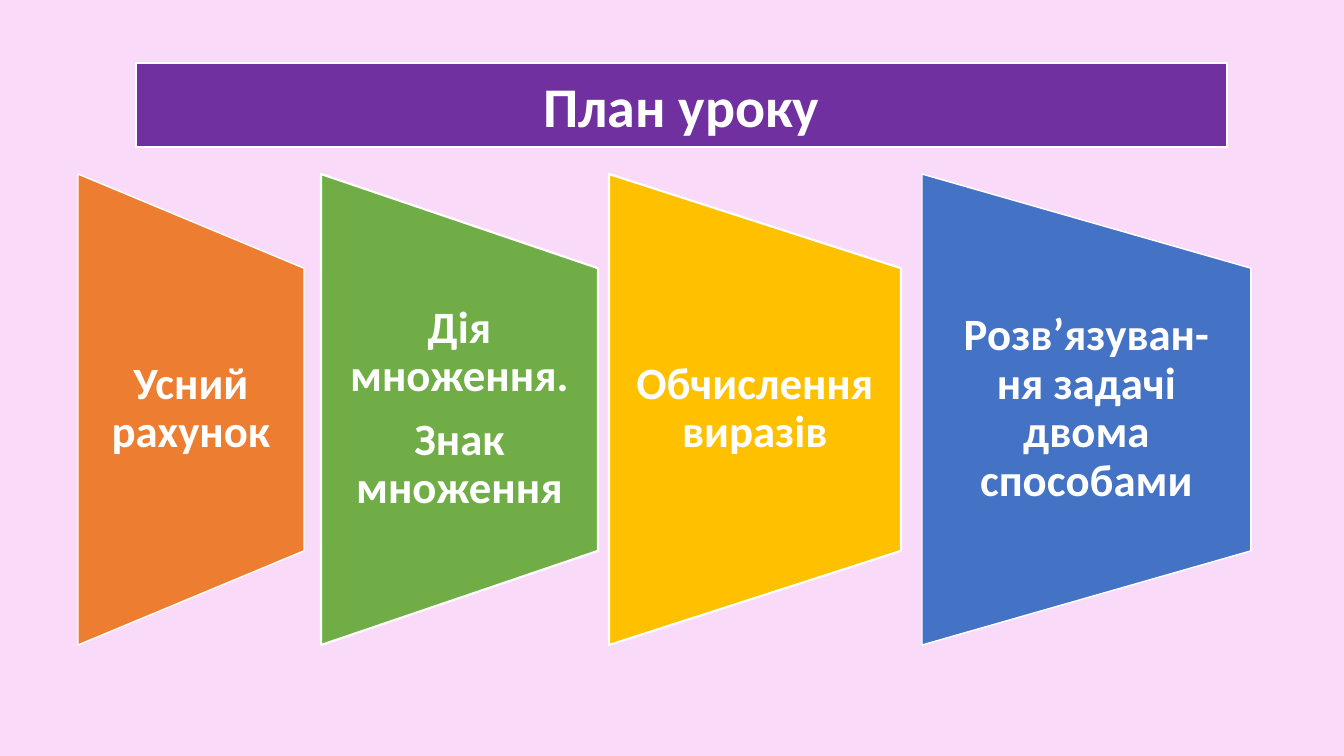
"""Build the lesson plan slide with a title bar and four stage panels."""
from typing import NamedTuple

from pptx import Presentation
from pptx import util as u
from pptx.dml.color import RGBColor
from pptx.enum import shapes, text

PX = 12192000 / 1344
PANEL_TOP, PANEL_HEIGHT = 174, 471
LABEL_TOP, LABEL_HEIGHT, LABEL_INSET = 268, 282, 22
WHITE = "FFFFFF"


class Stage(NamedTuple):
    left: int
    width: int
    fill: str
    outline: float
    lines: tuple[str, ...]


STAGES = (
    Stage(78, 226, "ED7D31", 1, ("Усний рахунок",)),
    Stage(321, 277, "70AD47", 1.5, ("Дія множення.", "Знак множення")),
    Stage(609, 292, "FFC000", 1.5, ("Обчислення виразів",)),
    Stage(922, 329, "4472C4", 1, ("Розв’язуван-ня задачі двома способами",)),
)


def px(length: float) -> int:
    return round(length * PX)


def colour(value: str) -> RGBColor:
    return RGBColor.from_string(value)


def paint(shape, fill: str, outline: float) -> None:
    shape.fill.solid()
    shape.fill.fore_color.rgb = colour(fill)
    shape.line.color.rgb = colour(WHITE)
    shape.line.width = u.Pt(outline)


def write(frame, lines: tuple[str, ...], *, size: int, spacing: float = 1, gap: float = 0) -> None:
    frame.word_wrap = True
    frame.vertical_anchor = text.MSO_ANCHOR.MIDDLE
    for index, line in enumerate(lines):
        para = frame.add_paragraph() if index else frame.paragraphs[0]
        para.alignment = text.PP_ALIGN.CENTER
        para.line_spacing = spacing
        para.space_before = u.Pt(gap if index else 0)
        span = para.add_run()
        span.text = line
        span.font.name = "Calibri"
        span.font.size = u.Pt(size)
        span.font.bold = True
        span.font.color.rgb = colour(WHITE)


def add_title(page) -> None:
    title = page.shapes.title
    title.left, title.top, title.width, title.height = map(px, (136, 66, 1091, 78))
    paint(title, "7030A0", 1.5)
    write(title.text_frame, ("План уроку",), size=40)
    title.text_frame.auto_size = text.MSO_AUTO_SIZE.SHAPE_TO_FIT_TEXT


def add_stage(page, stage: Stage) -> None:
    shift = (stage.width - PANEL_HEIGHT) / 2
    panel = page.shapes.add_shape(
        shapes.MSO_SHAPE.FLOWCHART_MANUAL_OPERATION,
        px(stage.left + shift), px(PANEL_TOP - shift), px(PANEL_HEIGHT), px(stage.width),
    )
    panel.rotation = 270
    panel.shadow.inherit = False
    paint(panel, stage.fill, stage.outline)

    box = page.shapes.add_textbox(px(stage.left), px(LABEL_TOP), px(stage.width), px(LABEL_HEIGHT))
    frame = box.text_frame
    frame.margin_left = frame.margin_right = px(LABEL_INSET)
    frame.margin_top = frame.margin_bottom = 0
    write(frame, stage.lines, size=32, spacing=0.9, gap=11.2)


def main() -> None:
    deck = Presentation()
    deck.slide_width, deck.slide_height = px(1344), px(756)
    page = deck.slides.add_slide(deck.slide_layouts.get_by_name("Title Only"))
    page.background.fill.solid()
    page.background.fill.fore_color.rgb = colour("F9DBF9")
    add_title(page)
    for stage in STAGES:
        add_stage(page, stage)
    deck.save("out.pptx")


if __name__ == "__main__":
    main()
